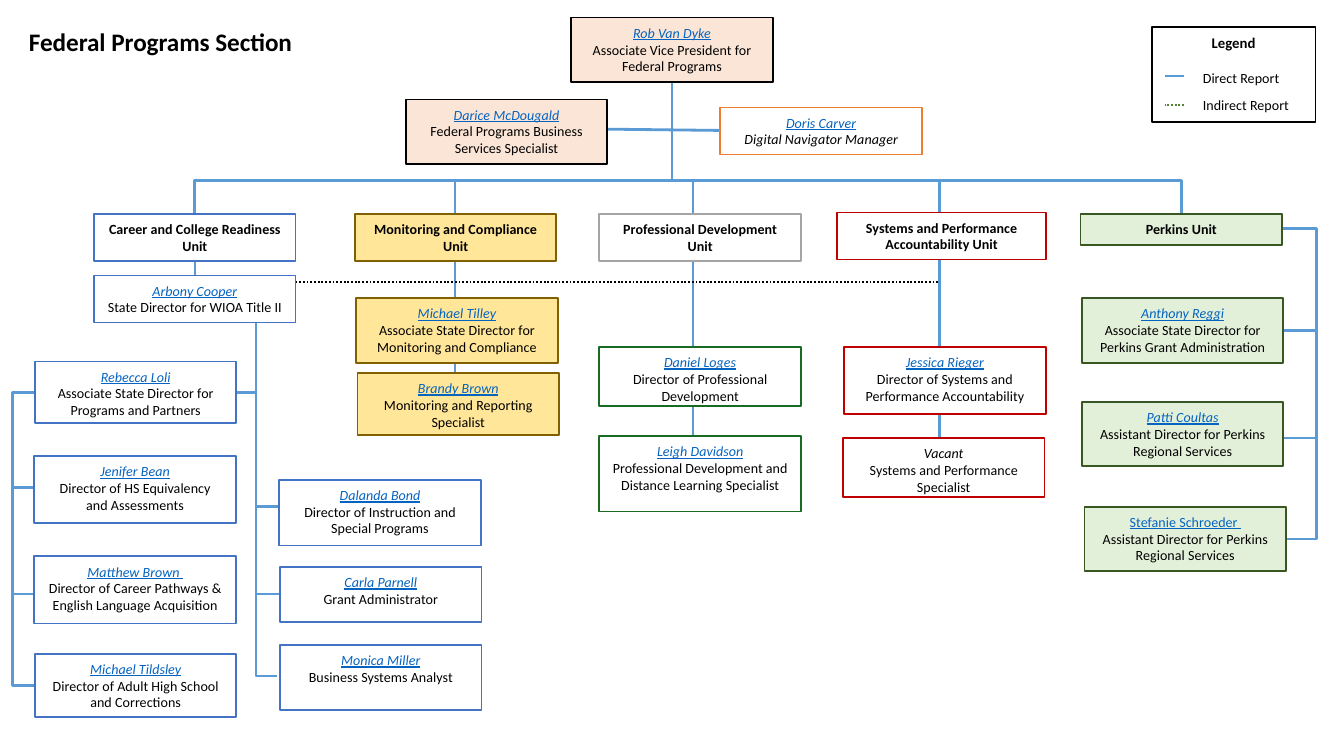
"""Build the organisation chart of the Federal Programs Section."""
from lxml import etree
from pptx import Presentation
from pptx.dml.color import RGBColor
from pptx.enum.dml import MSO_LINE
from pptx.enum.shapes import MSO_CONNECTOR, MSO_SHAPE
from pptx.enum.text import MSO_ANCHOR, PP_ALIGN
from pptx.oxml.ns import qn
from pptx.util import Pt

STRAIGHT, ELBOW = MSO_CONNECTOR.STRAIGHT, MSO_CONNECTOR.ELBOW
RECTANGLE = MSO_SHAPE.RECTANGLE
DOTTED = MSO_LINE.ROUND_DOT
TOP = MSO_ANCHOR.TOP
LEFT, CENTER = PP_ALIGN.LEFT, PP_ALIGN.CENTER

BLACK = RGBColor(0x00, 0x00, 0x00)
WHITE = RGBColor(0xFF, 0xFF, 0xFF)
LINK = RGBColor(0x05, 0x63, 0xC1)
REPORT = RGBColor(0x5B, 0x9B, 0xD5)
INDIRECT = RGBColor(0x54, 0x82, 0x35)
PEACH = RGBColor(0xFB, 0xE5, 0xD6)
ORANGE = RGBColor(0xED, 0x7D, 0x31)
BLUE = RGBColor(0x44, 0x72, 0xC4)
YELLOW = RGBColor(0xFF, 0xE6, 0x99)
BROWN = RGBColor(0x80, 0x60, 0x00)
GRAY = RGBColor(0xA5, 0xA5, 0xA5)
GREEN = RGBColor(0x19, 0x6B, 0x24)
RED = RGBColor(0xC0, 0x00, 0x00)
PALE_GREEN = RGBColor(0xE2, 0xF0, 0xD9)
DARK_GREEN = RGBColor(0x38, 0x57, 0x23)

BODY = {"name": "Calibri", "size": Pt(7.5), "bold": False, "italic": False, "underline": False}
ITALIC = {**BODY, "italic": True}
UNDERLINED = {**BODY, "underline": True}
PERSON = {**ITALIC, "underline": True}
UNIT = {**BODY, "bold": True}
LEGEND_HEAD = {**UNIT, "size": Pt(7.9)}
TITLE = {**UNIT, "size": Pt(13.5)}


def add_box(left, top, width, height, fill, border, lines):
    box = slide.shapes.add_shape(RECTANGLE, Pt(left), Pt(top), Pt(width), Pt(height))
    box.shadow.inherit = False
    if fill is None:
        box.fill.background()
    else:
        box.fill.solid()
        box.fill.fore_color.rgb = fill
    if border is None:
        box.line.fill.background()
    else:
        box.line.color.rgb = border
        box.line.width = Pt(1)
    frame = box.text_frame
    frame.word_wrap = True
    frame.vertical_anchor = TOP
    for index, (text, color, style) in enumerate(lines):
        paragraph = frame.add_paragraph() if index else frame.paragraphs[0]
        paragraph.alignment = CENTER
        run = paragraph.add_run()
        run.text = text
        for attribute, value in style.items():
            setattr(run.font, attribute, value)
        run.font.color.rgb = color
    return frame


def add_link(x1, y1, x2, y2, width=1.5, color=REPORT, dash=None, bend=None):
    kind = STRAIGHT if bend is None else ELBOW
    link = slide.shapes.add_connector(kind, Pt(x1), Pt(y1), Pt(x2), Pt(y2))
    link.line.color.rgb = color
    link.line.width = Pt(width)
    if dash:
        link.line.dash_style = dash
    properties = link._element.spPr
    etree.SubElement(properties, qn("a:effectLst"))
    if bend is not None:
        adjustments = properties.find(qn("a:prstGeom")).get_or_add_avLst()
        guide = etree.SubElement(adjustments, qn("a:gd"))
        guide.set("name", "adj1")
        guide.set("fmla", f"val {round(bend * 100000)}")


presentation = Presentation()
presentation.slide_width, presentation.slide_height = Pt(720), Pt(405)
slide = presentation.slides.add_slide(presentation.slide_layouts[6])

BUS_Y, LEFT_RAIL, STAFF_RAIL, PERKINS_RAIL = 96.5, 6.5, 137.2, 705

add_link(244, 207.4, 244, BUS_Y, 1)
add_link(360, 43.9, 360, BUS_Y)
add_link(371.3, 253.4, 371.3, BUS_Y)
add_link(503.3, BUS_Y, 503.3, 239.8)
add_link(104.4, 147.6, 104.4, 138.2, 1)
add_link(386, 69.9, 325.4, 69.2)

bus = slide.shapes.build_freeform(Pt(104.4), Pt(114.5))
bus.add_line_segments(
    [(Pt(x), Pt(y)) for x, y in [(104.4, BUS_Y), (633, BUS_Y), (633, 114.5)]], close=False)
bus_line = bus.convert_to_shape()
bus_line.shadow.inherit = False
bus_line.fill.background()
bus_line.line.color.rgb = REPORT
bus_line.line.width = Pt(1.5)

add_link(19.5, 210.2, 18.5, 367.2, bend=13)
for y in (261.4, 318.2):
    add_link(LEFT_RAIL, y, 18.7, y)
add_link(148.5, 362.2, STAFF_RAIL, 172.8, bend=1)
for y in (271.4, 318.2):
    add_link(149.5, y, STAFF_RAIL, y)
add_link(126.7, 210.2, STAFF_RAIL, 210.2)
add_link(687, 122.4, 689, 288.7, bend=9)
for y in (177.1, 234.7):
    add_link(687, y, PERKINS_RAIL, y)
add_link(502.6, 151.2, 158.4, 151.2, 1, BLACK, DOTTED)

units = [
    (50.4, 114.5, 108, 25.2, WHITE, BLUE, "Career and College Readiness Unit"),
    (190.1, 114.5, 108, 25.2, YELLOW, BROWN, "Monitoring and Compliance Unit"),
    (321.1, 114.5, 108, 25.2, WHITE, GRAY, "Professional Development Unit"),
    (448.6, 113.8, 111.6, 25.2, WHITE, RED, "Systems and Performance Accountability Unit"),
    (578.9, 114.5, 108, 16.6, PALE_GREEN, DARK_GREEN, "Perkins Unit"),
]
for left, top, width, height, fill, border, unit in units:
    add_box(left, top, width, height, fill, border, [(unit, BLACK, UNIT)])

teams = [
    (PEACH, BLACK, [
        (306, 9.4, 34.6, "Rob Van Dyke", "Associate Vice President for Federal Programs"),
        (217.4, 53.3, 34.6, "Darice McDougald", "Federal Programs Business Services Specialist"),
    ]),
    (WHITE, ORANGE, [(385.9, 57.6, 25.2, "Doris Carver", "Digital Navigator Manager")]),
    (WHITE, BLUE, [
        (50.4, 147.6, 25.2, "Arbony Cooper", "State Director for WIOA Title II"),
        (18.7, 193.7, 33.1, "Rebecca Loli", "Associate State Director for Programs and Partners"),
        (18.4, 244.4, 36, "Jenifer Bean", "Director of HS Equivalency and Assessments"),
        (18.4, 298.1, 36, "Matthew Brown ",
         "Director of Career Pathways & English Language Acquisition"),
        (18.7, 350.2, 33.8, "Michael Tildsley",
         "Director of Adult High School and Corrections"),
        (149.6, 257, 35.3, "Dalanda Bond", "Director of Instruction and Special Programs"),
        (150, 303.8, 29.5, "Carla Parnell", "Grant Administrator"),
        (150, 345.6, 34.6, "Monica Miller", "Business Systems Analyst"),
    ]),
    (YELLOW, BROWN, [
        (190.8, 159.8, 34.6, "Michael Tilley",
         "Associate State Director for Monitoring and Compliance"),
        (191.5, 199.8, 33.5, "Brandy Brown", "Monitoring and Reporting Specialist"),
    ]),
    (WHITE, GREEN, [
        (321.1, 185.8, 31.7, "Daniel Loges", "Director of Professional Development"),
        (321.1, 233.8, 40.3, "Leigh Davidson",
         "Professional Development and Distance Learning Specialist"),
    ]),
    (WHITE, RED, [
        (452.2, 185.8, 36, "Jessica Rieger",
         "Director of Systems and Performance Accountability"),
        (451.6, 234.7, 31.7, "Vacant", "Systems and Performance Specialist"),
    ]),
    (PALE_GREEN, DARK_GREEN, [
        (579.6, 159.8, 34.6, "Anthony Reggi",
         "Associate State Director for Perkins Grant Administration"),
        (579.6, 215.3, 34.6, "Patti Coultas",
         "Assistant Director for Perkins Regional Services"),
        (581, 271.4, 34.6, "Stefanie Schroeder ",
         "Assistant Director for Perkins Regional Services"),
    ]),
]
name_formats = {"Vacant": (BLACK, ITALIC), "Stefanie Schroeder ": (LINK, UNDERLINED)}
role_formats = {"Doris Carver": ITALIC}
for fill, border, members in teams:
    for left, top, height, person, role in members:
        color, style = name_formats.get(person, (LINK, PERSON))
        add_box(left, top, 108, height, fill, border, [
            (person, color, style), (role, BLACK, role_formats.get(person, BODY))])

heading = add_box(10.1, 11.5, 176.4, 21.6, WHITE, None,
                  [("Federal Programs Section", BLACK, TITLE)])
heading.paragraphs[0].alignment = LEFT
heading.margin_left = heading.margin_right = Pt(5.4)
heading.margin_top = heading.margin_bottom = Pt(2.7)

legend = add_box(617, 14.4, 87.8, 51.1, None, BLACK, [
    ("Legend", BLACK, LEGEND_HEAD),
    ("Direct Report", BLACK, BODY),
    ("Indirect Report", BLACK, BODY),
])
for entry, gap in zip(legend.paragraphs[1:], (9.6, 5.5)):
    entry.alignment = LEFT
    entry.space_before = Pt(gap)
    entry._p.get_or_add_pPr().set("marL", str(Pt(20.3)))
add_link(624.2, 40.7, 634.3, 40.7, 1)
add_link(634.3, 56.2, 624.2, 56.2, 1, INDIRECT, DOTTED)

presentation.save("out.pptx")
